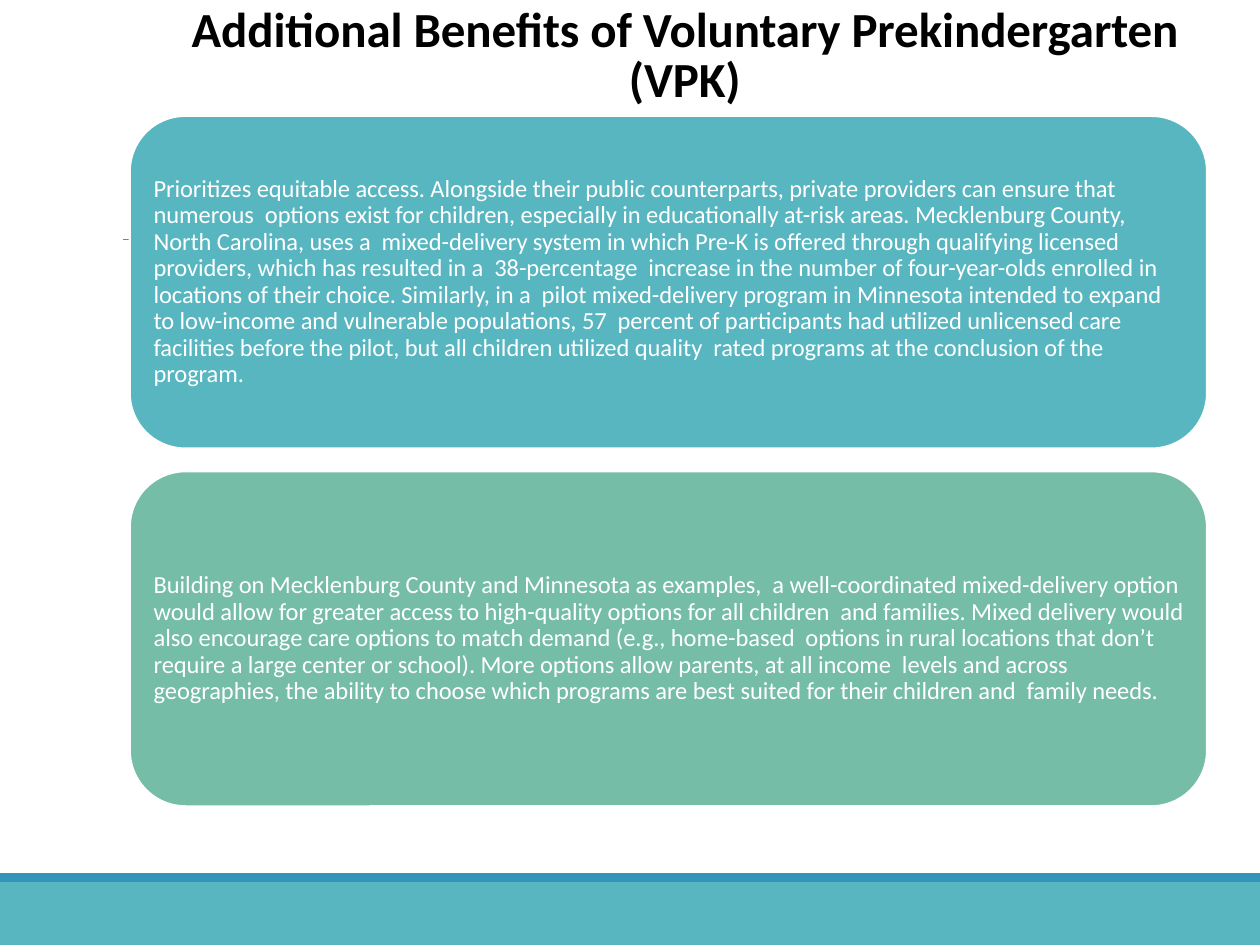
from lxml import etree
from pptx import Presentation
from pptx import util as u
from pptx.dml.color import RGBColor
from pptx.enum import shapes, text
from pptx.oxml.ns import qn

TEAL = RGBColor(0x58, 0xB6, 0xC0)
BLUE = RGBColor(0x34, 0x94, 0xBA)
GREEN = RGBColor(0x75, 0xBD, 0xA7)
GRAY = RGBColor(0x80, 0x80, 0x80)
WHITE = RGBColor(0xFF, 0xFF, 0xFF)
BLACK = RGBColor(0, 0, 0)

COLS, ROWS = 100, 75

TITLE = "Additional Benefits of Voluntary Prekindergarten (VPK)"
ACCESS = (
    "Prioritizes equitable access. Alongside their public counterparts, private "
    "providers can ensure that numerous  options exist for children, especially in "
    "educationally at-risk areas. Mecklenburg County, North Carolina, uses a  "
    "mixed-delivery system in which Pre-K is offered through qualifying licensed "
    "providers, which has resulted in a  38-percentage  increase in the number of "
    "four-year-olds enrolled in locations of their choice. Similarly, in a  pilot "
    "mixed-delivery program in Minnesota intended to expand to low-income and "
    "vulnerable populations, 57  percent of participants had utilized unlicensed "
    "care facilities before the pilot, but all children utilized quality  rated "
    "programs at the conclusion of the program."
)
CHOICE = (
    "Building on Mecklenburg County and Minnesota as examples,  a well-coordinated "
    "mixed-delivery option would allow for greater access to high-quality options "
    "for all children  and families. Mixed delivery would also encourage care "
    "options to match demand (e.g., home-based  options in rural locations that "
    "don’t require a large center or school). More options allow parents, at all "
    "income  levels and across geographies, the ability to choose which programs "
    "are best suited for their children and  family needs."
)


class Deck:
    font = "Calibri"
    inset = u.Inches(0.06)

    def __init__(self):
        self.file = Presentation()
        self.file.slide_width = u.Inches(10)
        self.file.slide_height = u.Inches(7.5)
        self.slide = self.file.slides.add_slide(self.file.slide_layouts[5])

    def place(self, x, y, w, h):
        col = self.file.slide_width / COLS
        row = self.file.slide_height / ROWS
        return [round(n) for n in (x * col, y * row, w * col, h * row)]

    def label(self, frame, words, size, color, align, space, bold=False):
        frame.text = words
        frame.word_wrap = True
        frame.auto_size = text.MSO_AUTO_SIZE.NONE
        frame.vertical_anchor = text.MSO_ANCHOR.MIDDLE
        para = frame.paragraphs[0]
        para.alignment = align
        para.line_spacing = space
        for run in para.runs:
            run.font.name = self.font
            run.font.size = u.Pt(size)
            run.font.bold = bold
            run.font.color.rgb = color
            run._r.get_or_add_rPr().set("spc", "-5")

    def title(self, words, *area):
        head = self.slide.shapes.title
        head.left, head.top, head.width, head.height = self.place(*area)
        self.label(head.text_frame, words, 28, BLACK, text.PP_ALIGN.CENTER, 0.85, True)

    def shape(self, kind, fill, *area):
        item = self.slide.shapes.add_shape(kind, *self.place(*area))
        item.shadow.inherit = False
        item.fill.solid()
        item.fill.fore_color.rgb = fill
        item.line.fill.background()
        return item

    def band(self, fill, *area):
        self.shape(shapes.MSO_SHAPE.RECTANGLE, fill, *area)

    def card(self, words, fill, *area):
        item = self.shape(shapes.MSO_SHAPE.ROUNDED_RECTANGLE, fill, *area)
        item.line.color.rgb = WHITE
        item.line.width = u.Pt(1.25)
        frame = item.text_frame
        frame.margin_left = frame.margin_right = self.inset
        frame.margin_top = frame.margin_bottom = self.inset
        self.label(frame, words, 14, WHITE, text.PP_ALIGN.LEFT, 0.9)

    def rule(self, x, y, w):
        left, top, width, _ = self.place(x, y, w, 0)
        line = self.slide.shapes.add_connector(
            shapes.MSO_CONNECTOR.STRAIGHT, left, top, left + width, top)
        line.line.color.rgb = GRAY
        line.line.width = u.Pt(0.5)
        etree.SubElement(line._element.spPr, qn("a:effectLst"))


def main():
    deck = Deck()
    deck.band(TEAL, 0, 70, COLS, 5)
    deck.band(BLUE, 0, 69.3, COLS, 0.7)
    deck.rule(9.8, 19, 81.7)
    deck.title(TITLE, 12.9, 0.1, 82.9, 9)
    deck.card(ACCESS, TEAL, 10.3, 9.2, 85.5, 26.4)
    deck.card(CHOICE, GREEN, 10.3, 37.4, 85.5, 26.6)
    deck.file.save("out.pptx")


if __name__ == "__main__":
    main()
